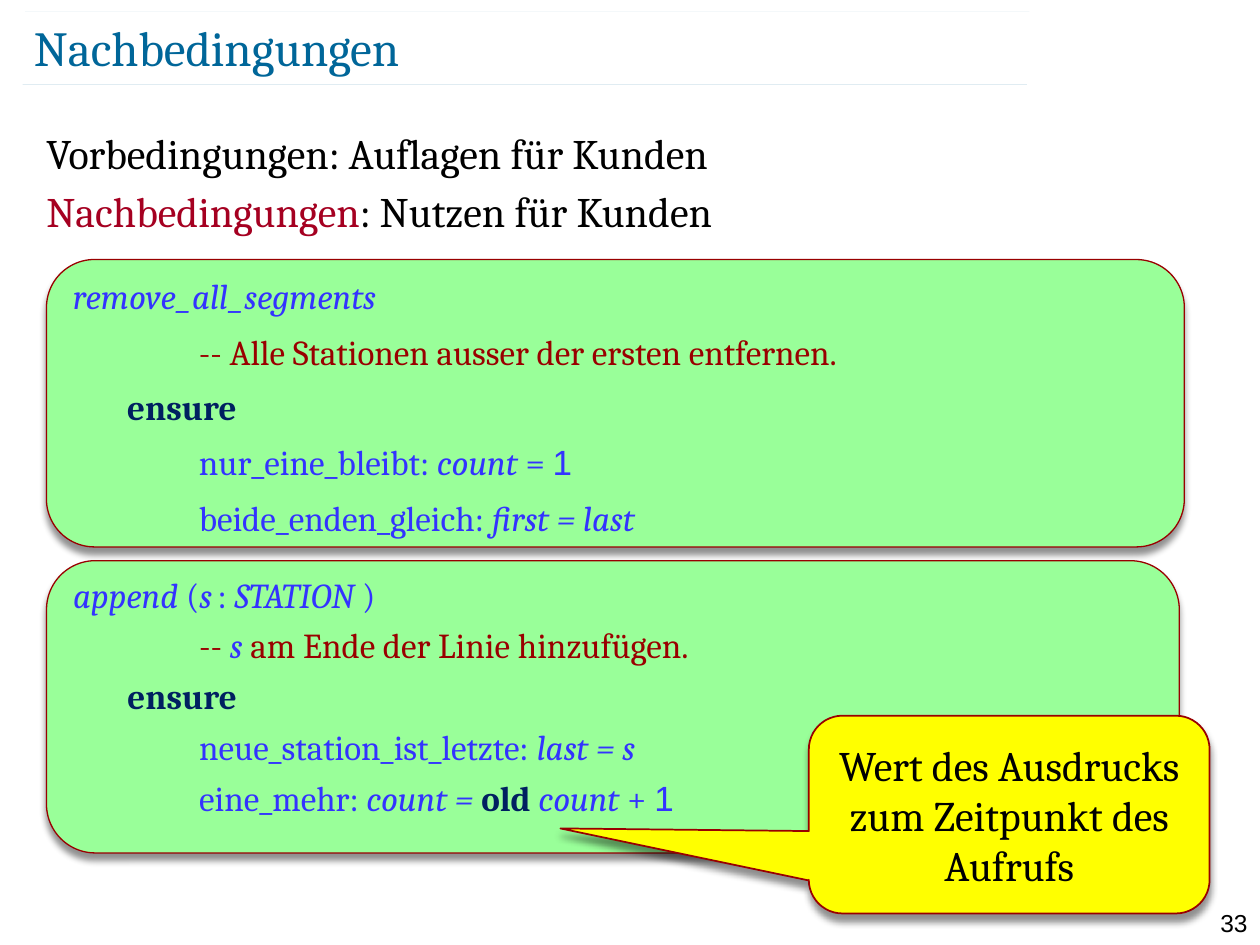
from lxml import etree
from pptx import Presentation
from pptx.dml.color import RGBColor
from pptx.enum.shapes import MSO_CONNECTOR, MSO_SHAPE
from pptx.enum.text import MSO_ANCHOR, PP_ALIGN
from pptx.oxml import parse_xml
from pptx.oxml.ns import nsdecls, qn
from pptx.util import Pt

BLACK = RGBColor(0, 0, 0)
TEAL = RGBColor(0x00, 0x66, 0x99)
CRIMSON = RGBColor(0xA5, 0x00, 0x21)
DARK_RED = RGBColor(0x99, 0x00, 0x00)
BLUE = RGBColor(0x33, 0x33, 0xFF)
NAVY = RGBColor(0x00, 0x20, 0x60)
GREEN = RGBColor(0x99, 0xFF, 0x99)
YELLOW = RGBColor(0xFF, 0xFF, 0x00)

# Style name: font, size, colour, bold, italic
STYLES = {
    "number": ("Arial", 14, BLACK, False, False),
    "title": ("Cambria", 28, TEAL, False, False),
    "body": ("Cambria", 24, BLACK, False, False),
    "term": ("Cambria", 24, CRIMSON, False, False),
    "code": ("Cambria", 20, BLUE, False, False),
    "gap": ("Cambria", 14, BLUE, False, False),
    "name": ("Cambria", 20, BLUE, False, True),
    "digit": ("Arial", 20, BLUE, False, False),
    "comment": ("Cambria", 20, DARK_RED, False, False),
    "keyword": ("Cambria", 20, NAVY, True, False),
}
KEYWORD_INDENT, CODE_INDENT = 31, 72


def write(box, paragraphs, align=PP_ALIGN.LEFT, before=0, spacing=None,
          anchor=MSO_ANCHOR.TOP, insets=(7.2, 3.6)):
    """Fill a box; each paragraph is (indent, [(text, style name), ...])."""
    frame = box.text_frame
    frame.word_wrap = True
    frame.vertical_anchor = anchor
    frame.margin_left = frame.margin_right = Pt(insets[0])
    frame.margin_top = frame.margin_bottom = Pt(insets[1])
    for index, (indent, spans) in enumerate(paragraphs):
        para = frame.add_paragraph() if index else frame.paragraphs[0]
        para.alignment = align
        if index:
            para.space_before = Pt(before)
        if spacing:
            para.line_spacing = spacing
        if indent:
            properties = para._p.get_or_add_pPr()
            properties.set("marL", str(Pt(indent)))
            properties.set("indent", "0")
        for text, style in spans:
            span = para.add_run()
            span.text = text
            font = span.font
            font.name, size, font.color.rgb, font.bold, font.italic = STYLES[style]
            font.size = Pt(size)


def add_panel(kind, bounds, fill, line_width):
    """Add a filled, red-edged shape with a soft shadow below it."""
    panel = page.shapes.add_shape(kind, *map(Pt, bounds))
    panel.fill.solid()
    panel.fill.fore_color.rgb = fill
    panel.line.color.rgb = DARK_RED
    panel.line.width = Pt(line_width)
    panel.shadow.inherit = False
    effects = panel._element.spPr.find(qn("a:effectLst"))
    effects.append(parse_xml(
        f'<a:outerShdw {nsdecls("a")} blurRad="{Pt(4)}" dist="{Pt(4)}" '
        'dir="5400000" rotWithShape="0"><a:srgbClr val="000000">'
        '<a:alpha val="43000"/></a:srgbClr></a:outerShdw>'))
    return panel


deck = Presentation()
deck.slide_width, deck.slide_height = Pt(720), Pt(540)
page = deck.slides.add_slide(deck.slide_layouts[6])

# Hairlines around the title
for left, top in ((13, 48.2), (14.4, 6.5)):
    rule = page.shapes.add_connector(
        MSO_CONNECTOR.STRAIGHT, Pt(left), Pt(top), Pt(left + 573.8), Pt(top))
    rule.line.color.rgb = TEAL
    rule.line.width = Pt(0.1)
    colour = rule._element.spPr.find(".//" + qn("a:srgbClr"))
    etree.SubElement(colour, qn("a:alpha")).set("val", "35000")
    etree.SubElement(rule._element.spPr, qn("a:effectLst"))

page_number = page.shapes.add_textbox(Pt(680.4), Pt(515.5), Pt(39.6), Pt(17.3))
write(page_number, [(0, [("33", "number")])], align=PP_ALIGN.RIGHT)

title = page.shapes.add_textbox(Pt(19.4), Pt(9.4), Pt(625.7), Pt(34.6))
write(title, [(0, [("Nachbedingungen", "title")])],
      anchor=MSO_ANCHOR.MIDDLE, insets=(0, 0))

body = page.shapes.add_textbox(Pt(19.4), Pt(69.1), Pt(676.8), Pt(444.2))
write(body, [
    (0, [("Vorbedingungen: Auflagen für Kunden", "body")]),
    (0, [("Nachbedingungen", "term"), (": Nutzen für Kunden", "body")]),
], before=4.8)

remove_panel = add_panel(
    MSO_SHAPE.ROUNDED_RECTANGLE, (26.6, 148.3, 650.2, 164.2), GREEN, 0.75)
write(remove_panel, [
    (0, [("remove_all_segments", "name")]),
    (CODE_INDENT, [("-- Alle Stationen ausser der ersten entfernen.", "comment")]),
    (KEYWORD_INDENT, [("ensure", "keyword")]),
    (CODE_INDENT, [("nur_eine_bleibt: ", "code"), ("count ", "name"),
                   ("= ", "code"), ("1", "digit")]),
    (CODE_INDENT, [("beide_enden_gleich: ", "code"), ("first = last", "name")]),
], before=10, spacing=0.9)

append_panel = add_panel(
    MSO_SHAPE.ROUNDED_RECTANGLE, (26.6, 320.4, 647.3, 167), GREEN, 0.75)
write(append_panel, [
    (0, [("append ", "name"), ("(", "code"), ("s", "name"), (" ", "gap"),
         (":", "code"), (" STATION ", "name"), (")", "code")]),
    (CODE_INDENT, [("-- ", "comment"), ("s", "name"),
                   (" am Ende der Linie hinzufügen.", "comment")]),
    (KEYWORD_INDENT, [("ensure", "keyword")]),
    (CODE_INDENT, [("neue_station_ist_letzte:", "code"), (" last = s", "name")]),
    (CODE_INDENT, [("eine_mehr: ", "code"), ("count = ", "name"),
                   ("old ", "keyword"), ("count ", "name"),
                   ("+ ", "code"), ("1", "digit")]),
], before=9.8, spacing=0.8)

callout = add_panel(
    MSO_SHAPE.ROUNDED_RECTANGULAR_CALLOUT, (462.2, 409, 229, 113), YELLOW, 1)
for index, value in enumerate((-1.12, 0.07, 0.17)):
    callout.adjustments[index] = value
write(callout, [(0, [("Wert des Ausdrucks zum Zeitpunkt des Aufrufs", "body")])],
      align=PP_ALIGN.CENTER, anchor=MSO_ANCHOR.MIDDLE, insets=(0, 3.6))

deck.save("out.pptx")
